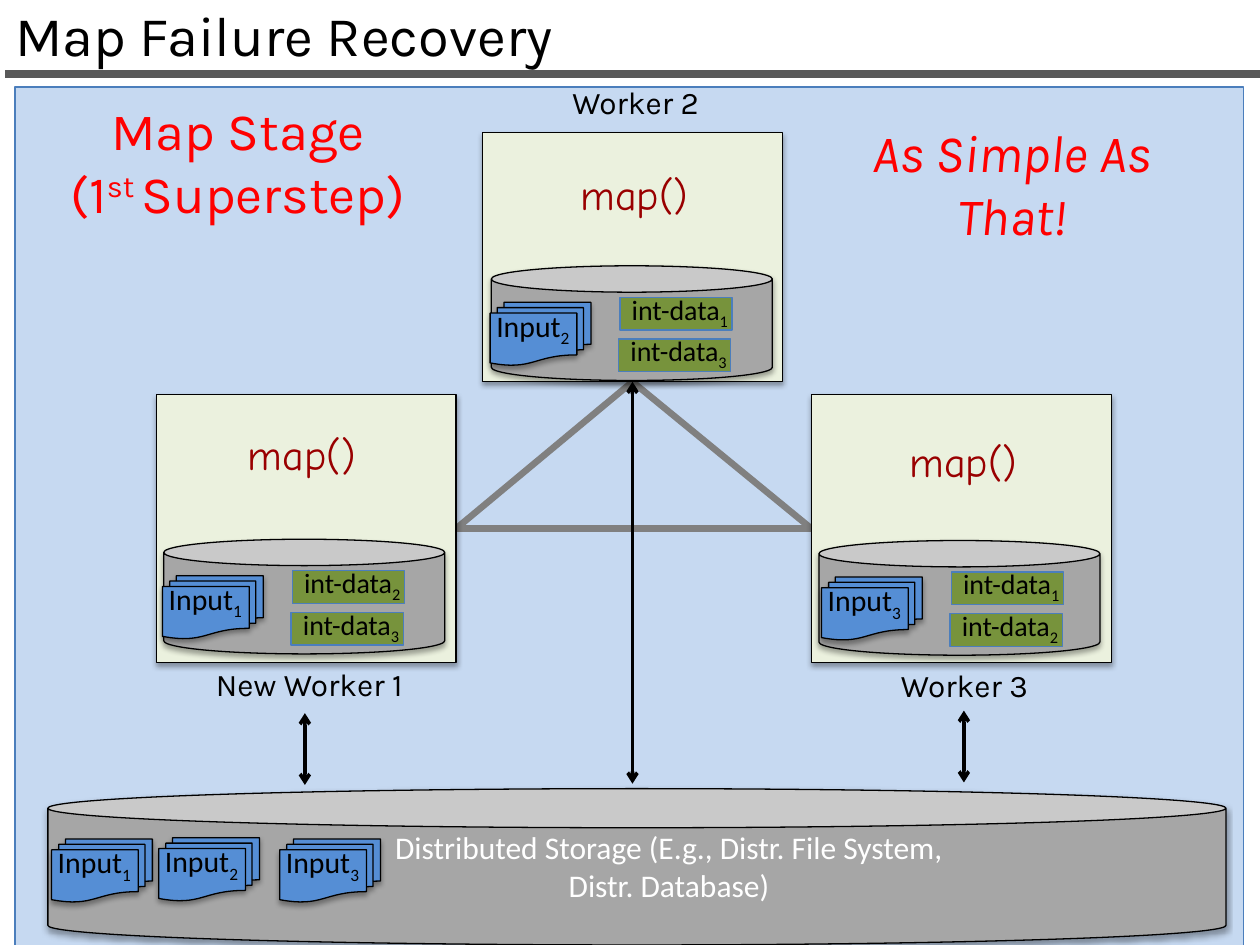
from dataclasses import dataclass
from lxml.etree import SubElement
from pptx import Presentation
from pptx.dml.color import RGBColor
from pptx.enum.shapes import MSO_CONNECTOR, MSO_SHAPE
from pptx.enum.text import MSO_ANCHOR, PP_ALIGN
from pptx.oxml.ns import qn
from pptx.util import Inches, Pt


@dataclass(frozen=True)
class Theme:
    black: str = "000000"
    white: str = "FFFFFF"
    red: str = "FF0000"
    code: str = "990000"
    panel: str = "C6D9F1"
    worker: str = "EBF1DE"
    disk: str = "A6A6A6"
    document: str = "558ED5"
    data: str = "77933C"
    edge: str = "4B7EBC"
    rule: str = "595959"
    link: str = "808080"
    heading: str = "Karla"
    body: str = "Calibri"
    mono: str = "Comic Neue"
    title_size: float = 32
    callout_size: float = 30
    code_size: float = 24
    label_size: float = 18
    input_size: float = 17
    data_size: float = 16


class Diagram:
    def __init__(self, slide, theme):
        self.s = slide
        self.t = theme

    def style(self, tf, size, font, color, align, italic=False):
        for p in tf.paragraphs:
            p.alignment = align
            for r in p.runs:
                r.font.size = Pt(size)
                r.font.name = font
                r.font.italic = italic
                r.font.color.rgb = RGBColor.from_string(color)

    def title(self, text, box):
        sp = self.s.shapes.title
        sp.left, sp.top, sp.width, sp.height = map(Inches, box)
        tf = sp.text_frame
        tf.text = text
        tf.vertical_anchor = MSO_ANCHOR.TOP
        self.style(tf, self.t.title_size, self.t.heading, self.t.black, PP_ALIGN.LEFT)

    def text(self, box, lines, size, font, color, align=PP_ALIGN.CENTER, italic=False, wrap=True):
        tf = self.s.shapes.add_textbox(*map(Inches, box)).text_frame
        tf.word_wrap = wrap
        for i, runs in enumerate(lines):
            p = tf.add_paragraph() if i else tf.paragraphs[0]
            for text, baseline in runs:
                r = p.add_run()
                r.text = text
                if baseline:
                    r._r.get_or_add_rPr().set("baseline", str(baseline * 1000))
        self.style(tf, size, font, color, align, italic)

    def shape(self, kind, box, fill, line, shadow=True):
        sp = self.s.shapes.add_shape(kind, *map(Inches, box))
        sp.fill.solid()
        sp.fill.fore_color.rgb = RGBColor.from_string(fill)
        sp.line.color.rgb = RGBColor.from_string(line)
        sp.line.width = Pt(0.75)
        sp.shadow.inherit = False
        if shadow:
            effects = sp._element.spPr.find(qn("a:effectLst"))
            outer = SubElement(effects, qn("a:outerShdw"), blurRad=str(Pt(3.1)),
                               dist=str(Pt(1.8)), dir="5400000", rotWithShape="0")
            color = SubElement(outer, qn("a:srgbClr"), val=self.t.black)
            SubElement(color, qn("a:alpha"), val="35000")
        return sp

    def line(self, start, end, color, width, arrows=False):
        cx = self.s.shapes.add_connector(MSO_CONNECTOR.STRAIGHT, *map(Inches, start + end))
        cx.line.color.rgb = RGBColor.from_string(color)
        cx.line.width = Pt(width)
        if arrows:
            ln = cx.line._get_or_add_ln()
            for end_tag in ("a:headEnd", "a:tailEnd"):
                SubElement(ln, qn(end_tag), type="arrow")
        SubElement(cx._element.spPr, qn("a:effectLst"))
        return cx

    def disk(self, box, cap):
        sp = self.shape(MSO_SHAPE.CAN, box, self.t.disk, self.t.black)
        sp.adjustments[0] = cap

    def worker(self, name, box, label_box):
        self.text(label_box, [[(name, 0)]], self.t.label_size, self.t.heading, self.t.black)
        return self.shape(MSO_SHAPE.RECTANGLE, box, self.t.worker, self.t.black)

    def input(self, x, y, number):
        self.shape(MSO_SHAPE.FLOWCHART_MULTIDOCUMENT, (x, y, 0.8, 0.5),
                   self.t.document, self.t.black)
        self.text((x - 0.05, y - 0.01, 0.91, 0.39), [[("Input", 0), (number, -25)]],
                  self.t.input_size, self.t.body, self.t.black, PP_ALIGN.LEFT)

    def int_data(self, x, y, number):
        self.shape(MSO_SHAPE.RECTANGLE, (x, y, 0.89, 0.26), self.t.data, self.t.edge, False)
        self.text((x - 0.02, y - 0.09, 0.99, 0.37), [[("int-data", 0), (number, -25)]],
                  self.t.data_size, self.t.body, self.t.black, wrap=False)

    def local_store(self, x, y, shift, own, others):
        self.disk((x, y, 2.23, 0.91), 0.23)
        self.input(x + shift - 0.01, y + 0.29, own)
        for i, number in enumerate(others):
            self.int_data(x + shift + 1.02 - 0.01 * i, y + 0.25 + 0.33 * i, number)

    def map_call(self, x, y):
        self.text((x, y, 1.35, 0.5), [[("map()", 0)]],
                  self.t.code_size, self.t.mono, self.t.code)

    def callout(self, box, lines, italic=False):
        self.text(box, lines, self.t.callout_size, self.t.heading, self.t.red, italic=italic)


def main():
    prs = Presentation()
    prs.slide_width, prs.slide_height = Inches(10), Inches(7.5)
    t = Theme()
    d = Diagram(prs.slides.add_slide(prs.slide_layouts[5]), t)

    d.title("Map Failure Recovery", (0.02, -0.05, 10.05, 0.66))
    d.shape(MSO_SHAPE.RECTANGLE, (0.12, 0.69, 9.75, 6.85), t.panel, t.edge, False)
    d.disk((0.38, 6.26, 9.35, 1.24), 0.25)
    d.line((0.04, 0.59), (10.04, 0.59), t.rule, 4.5)

    top, left, right = (5.02, 3.03), (3.62, 4.2), (6.44, 4.2)
    links = [d.line(a, b, t.link, 3.75)
             for a, b in ((right, top), (top, left), (right, left))]
    worker3 = d.worker("Worker 3", (6.44, 3.13, 2.38, 2.13), (6.79, 5.24, 1.73, 0.4))
    worker1 = d.worker("New Worker 1", (1.24, 3.13, 2.38, 2.13), (1.34, 5.23, 2.23, 0.4))
    worker2 = d.worker("Worker 2", (3.83, 1.05, 2.38, 1.98), (4.1, 0.61, 1.89, 0.4))
    ends = (((worker3, 1), (worker2, 0 + 2)), ((worker2, 2), (worker1, 3)),
            ((worker3, 1), (worker1, 3)))
    for cx, (begin, end) in zip(links, ends):
        cx.begin_connect(*begin)
        cx.end_connect(*end)

    for x, y in ((2.42, 5.66), (7.65, 5.64)):
        d.line((x, y), (x, y + 0.57), t.black, 2, True)
    d.line(top, (5.02, 6.22), t.black, 2, True).begin_connect(worker2, 2)

    d.text((2.81, 6.52, 5, 0.71),
           [[("Distributed Storage (E.g., Distr. File System, Distr. Database)", 0)]],
           t.label_size, t.body, t.white)
    for x, y, number in ((0.41, 6.66, "1"), (1.26, 6.65, "2"), (2.22, 6.66, "3")):
        d.input(x, y, number)

    d.local_store(1.3, 4.28, 0, "1", "23")
    d.local_store(3.9, 2.11, 0, "2", "13")
    d.local_store(6.5, 4.29, 0.03, "3", "12")
    for x, y in ((4.36, 1.29), (6.97, 3.41), (1.72, 3.35)):
        d.map_call(x, y)

    d.callout((0.3, 0.73, 3.18, 1.11),
              [[("Map Stage", 0)], [("(1", 0), ("st ", 30), ("Superstep)", 0)]])
    d.callout((6.44, 0.9, 3.18, 1.11), [[("As Simple As That!", 0)]], italic=True)

    prs.save("out.pptx")


if __name__ == "__main__":
    main()
